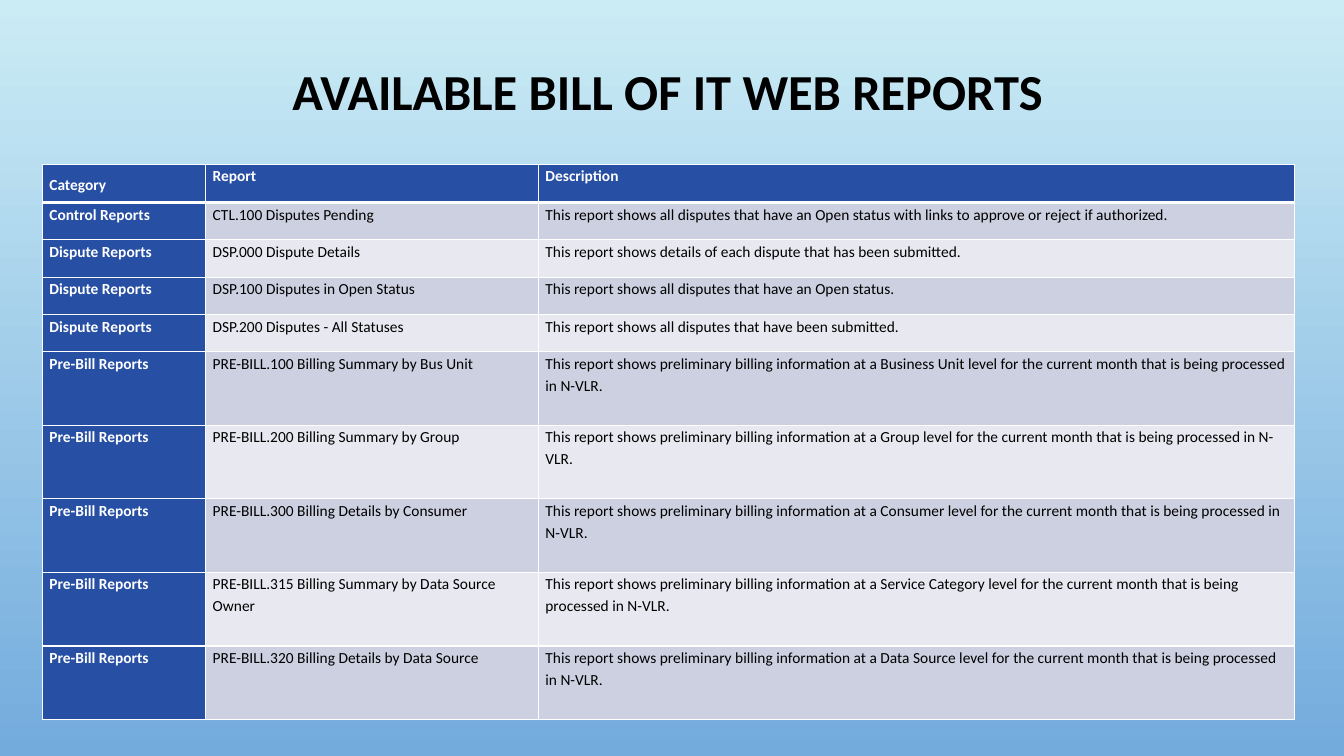
from lxml import etree
from pptx import Presentation
from pptx import util as u
from pptx.dml.color import RGBColor
from pptx.enum import text
from pptx.oxml import ns

SKY = RGBColor(0xCB, 0xEC, 0xF5)
HORIZON = RGBColor(0x73, 0xAB, 0xDD)
NAVY = RGBColor(0x27, 0x4F, 0xA4)
BANDS = (RGBColor(0xCD, 0xD0, 0xE0), RGBColor(0xE8, 0xE9, 0xF0))
WHITE = RGBColor(0xFF, 0xFF, 0xFF)
BLACK = RGBColor(0, 0, 0)

COLUMN_WIDTHS = (1.62, 3.3, 7.5)
HEADER_HEIGHT, SHORT_HEIGHT, TALL_HEIGHT = 0.38, 0.37, 0.73
HEADER = ("Category", "Report", "Description")
SHORT_REPORTS = [
    ("Control Reports", "CTL.100 Disputes Pending",
     "This report shows all disputes that have an Open status with links to approve or reject if authorized."),
    ("Dispute Reports", "DSP.000 Dispute Details",
     "This report shows details of each dispute that has been submitted."),
    ("Dispute Reports", "DSP.100 Disputes in Open Status",
     "This report shows all disputes that have an Open status."),
    ("Dispute Reports", "DSP.200 Disputes - All Statuses",
     "This report shows all disputes that have been submitted."),
]
PRE_BILL_REPORTS = [
    ("100 Billing Summary by Bus Unit", "Business Unit"),
    ("200 Billing Summary by Group", "Group"),
    ("300 Billing Details by Consumer", "Consumer"),
    ("315 Billing Summary by Data Source Owner", "Service Category"),
    ("320 Billing Details by Data Source", "Data Source"),
]


def apply_format(target, values):
    for name, value in values.items():
        setattr(target, name, value)


def pre_bill_row(report, level):
    return (
        "Pre-Bill Reports",
        f"PRE-BILL.{report}",
        f"This report shows preliminary billing information at a {level} level "
        "for the current month that is being processed in N-VLR.",
    )


def paint_background(slide):
    fill = slide.background.fill
    fill.gradient()
    fill.gradient_angle = 270
    for stop, color in zip(fill.gradient_stops, (SKY, HORIZON)):
        stop.color.rgb = color


def write_text(frame, content, size, color, bold, paragraph_format):
    frame.text = content
    paragraph = frame.paragraphs[0]
    apply_format(paragraph, paragraph_format)
    apply_format(paragraph.font, {"name": "Calibri", "size": u.Pt(size), "bold": bold})
    paragraph.font.color.rgb = color


def add_title(slide, content):
    title = slide.shapes.title
    apply_format(title, {
        "left": u.Inches(0.96), "top": u.Inches(0.24),
        "width": u.Inches(11.33), "height": u.Inches(1.39),
    })
    write_text(title.text_frame, content, 36, BLACK, True,
               {"alignment": text.PP_ALIGN.CENTER, "line_spacing": 0.9})
    title.text_frame.vertical_anchor = text.MSO_ANCHOR.MIDDLE


def set_borders(cell, widths):
    properties = cell._tc.get_or_add_tcPr()
    for position, (side, width) in enumerate(widths.items()):
        line = etree.Element(ns.qn(f"a:ln{side}"), w=str(u.Pt(width)))
        fill = etree.SubElement(line, ns.qn("a:solidFill"))
        etree.SubElement(fill, ns.qn("a:srgbClr"), val=str(WHITE))
        properties.insert(position, line)


def format_cell(cell, content, row, column):
    emphasized = row == 0 or column == 0
    centered = row == 0 and column == 0
    apply_format(cell, {
        "margin_left": u.Inches(0.07), "margin_right": u.Inches(0.07),
        "margin_top": 0, "margin_bottom": 0,
        "vertical_anchor": text.MSO_ANCHOR.MIDDLE if centered else text.MSO_ANCHOR.TOP,
    })
    write_text(cell.text_frame, content, 11, WHITE if emphasized else BLACK,
               emphasized, {"line_spacing": 1.15})
    cell.fill.solid()
    cell.fill.fore_color.rgb = NAVY if emphasized else BANDS[(row - 1) % 2]
    set_borders(cell, {"L": 1, "R": 1, "T": 3 if row == 1 else 1, "B": 3 if row == 0 else 1})


def add_report_table(slide, rows, heights):
    frame = slide.shapes.add_table(
        len(rows), len(COLUMN_WIDTHS), u.Inches(0.42), u.Inches(1.63),
        u.Inches(sum(COLUMN_WIDTHS)), u.Inches(sum(heights)))
    table = frame.table
    for column, width in zip(table.columns, COLUMN_WIDTHS):
        column.width = u.Inches(width)
    for row, height in zip(table.rows, heights):
        row.height = u.Inches(height)
    for row_index, contents in enumerate(rows):
        for column_index, content in enumerate(contents):
            format_cell(table.cell(row_index, column_index), content, row_index, column_index)


def main():
    presentation = Presentation()
    presentation.slide_width = u.Inches(13.33)
    presentation.slide_height = u.Inches(7.5)
    slide = presentation.slides.add_slide(presentation.slide_layouts[5])
    paint_background(slide)
    add_title(slide, "AVAILABLE BILL OF IT WEB REPORTS")
    rows = [HEADER, *SHORT_REPORTS, *(pre_bill_row(*report) for report in PRE_BILL_REPORTS)]
    heights = ([HEADER_HEIGHT] + [SHORT_HEIGHT] * len(SHORT_REPORTS)
               + [TALL_HEIGHT] * len(PRE_BILL_REPORTS))
    add_report_table(slide, rows, heights)
    presentation.save("out.pptx")


if __name__ == "__main__":
    main()
